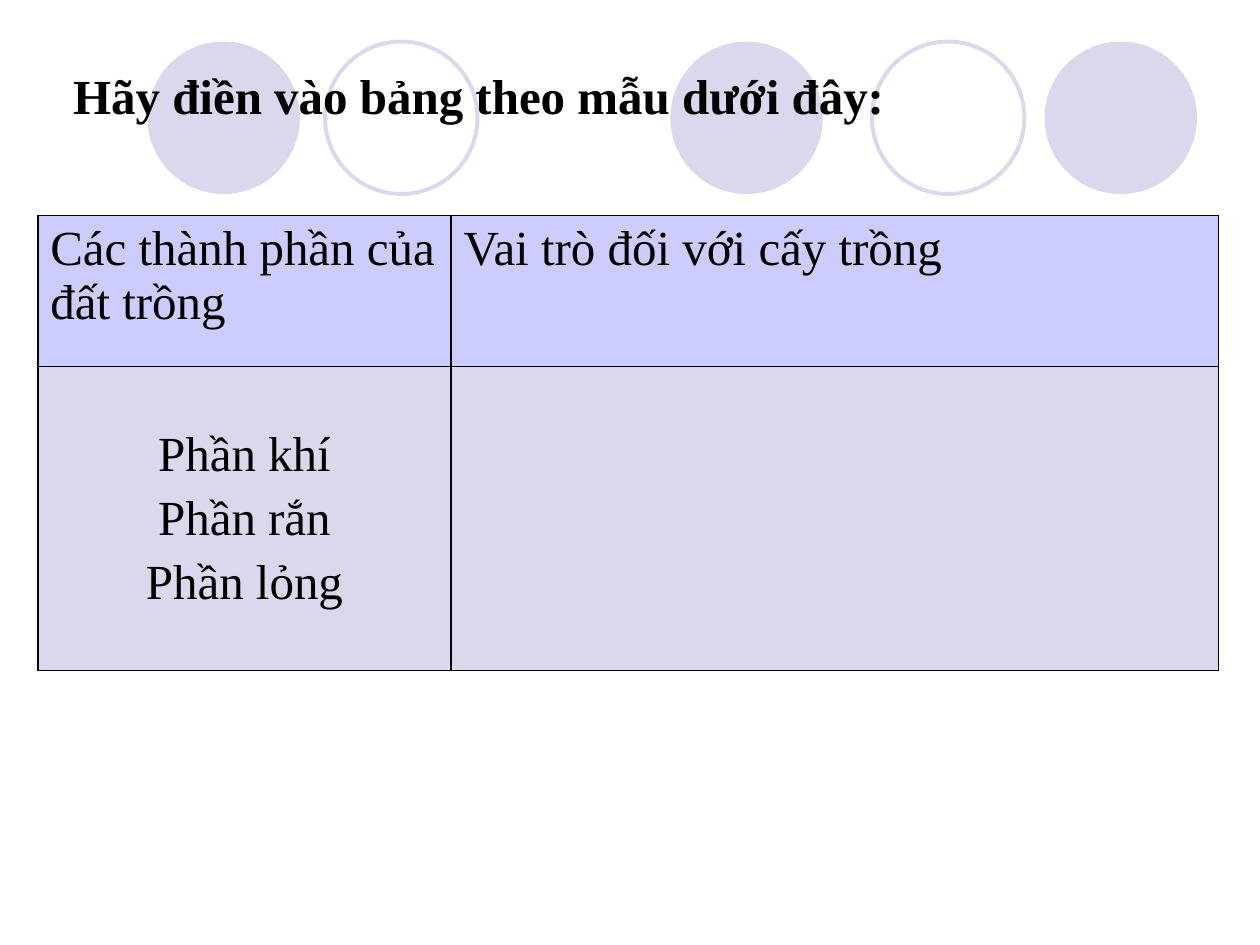
from lxml import etree
from pptx import Presentation
from pptx import util as u
from pptx.dml.color import RGBColor
from pptx.enum import shapes, text
from pptx.oxml.ns import qn

BLACK = RGBColor(0x00, 0x00, 0x00)
LAVENDER = RGBColor(0xD9, 0xD8, 0xEC)
PERIWINKLE = RGBColor(0xCC, 0xCC, 0xFF)
FONT = "Times New Roman"


def style(p, align, bold=False):
    """Align a paragraph and set the font of its runs."""
    p.alignment = align
    for r in p.runs:
        r.font.name, r.font.size, r.font.bold = FONT, u.Pt(28), bold
        r.font.color.rgb = BLACK


def add_circles(s, left, top, size):
    """Draw the row of filled and outlined circles."""
    for offset, filled in ((0, True), (1.41, False), (4.15, True), (5.75, False), (7.12, True)):
        sp = s.shapes.add_shape(shapes.MSO_SHAPE.OVAL, left + u.Inches(offset), top, size, size)
        sp.shadow.inherit = False
        if filled:
            sp.fill.solid()
            sp.fill.fore_color.rgb = LAVENDER
            sp.line.fill.background()
        else:
            sp.fill.background()
            sp.line.color.rgb = LAVENDER
            sp.line.width = u.Pt(2.25)


def place_title(s, left, top, width, height):
    """Fill the title placeholder and bring it in front of the circles."""
    sp = s.shapes.title
    sp.left, sp.top, sp.width, sp.height = left, top, width, height
    tf = sp.text_frame
    tf.text = "Hãy điền vào bảng theo mẫu dưới đây:"
    tf.vertical_anchor = text.MSO_ANCHOR.TOP
    tf.margin_top = 0
    tf.auto_size = text.MSO_AUTO_SIZE.NONE
    style(tf.paragraphs[0], text.PP_ALIGN.LEFT, bold=True)
    sp.element.getparent().append(sp.element)


def add_borders(cell):
    """Give a cell a thin black line on every side."""
    tcPr = cell._tc.get_or_add_tcPr()
    for side in ("a:lnL", "a:lnR", "a:lnT", "a:lnB"):
        ln = etree.SubElement(tcPr, qn(side), w=str(u.Pt(1)))
        fill = etree.SubElement(ln, qn("a:solidFill"))
        etree.SubElement(fill, qn("a:srgbClr"), val=str(BLACK))


def add_soil_table(s, left, top, width, height):
    """Add the table of soil parts and their roles."""
    rows = (
        ("Các thành phần của đất trồng", "Vai trò đối với cấy trồng"),
        ("Phần khí\nPhần rắn\nPhần lỏng", ""),
    )
    looks = (
        (PERIWINKLE, text.PP_ALIGN.LEFT, text.MSO_ANCHOR.TOP),
        (LAVENDER, text.PP_ALIGN.CENTER, text.MSO_ANCHOR.MIDDLE),
    )
    table = s.shapes.add_table(2, 2, left, top, width, height).table
    table.columns[0].width = u.Inches(3.28)
    table.columns[1].width = width - u.Inches(3.28)
    table.rows[0].height = u.Inches(1.2)
    table.rows[1].height = height - u.Inches(1.2)
    for i, (words, (color, align, anchor)) in enumerate(zip(rows, looks)):
        for j, word in enumerate(words):
            cell = table.cell(i, j)
            cell.text_frame.text = word
            cell.vertical_anchor = anchor
            add_borders(cell)
            cell.fill.solid()
            cell.fill.fore_color.rgb = color
            for p in cell.text_frame.paragraphs:
                p.space_before = u.Pt(5.6)
                style(p, align)


def main():
    """Build and save the slide."""
    prs = Presentation()
    prs.slide_width, prs.slide_height = u.Inches(10), u.Inches(7.5)
    s = prs.slides.add_slide(prs.slide_layouts[5])
    add_circles(s, u.Inches(1.17), u.Inches(0.33), u.Inches(1.21))
    place_title(s, u.Inches(0.48), u.Inches(0.52), u.Inches(9.05), u.Inches(0.8))
    add_soil_table(s, u.Inches(0.3), u.Inches(1.71), u.Inches(9.37), u.Inches(3.61))
    prs.save("out.pptx")


if __name__ == "__main__":
    main()
